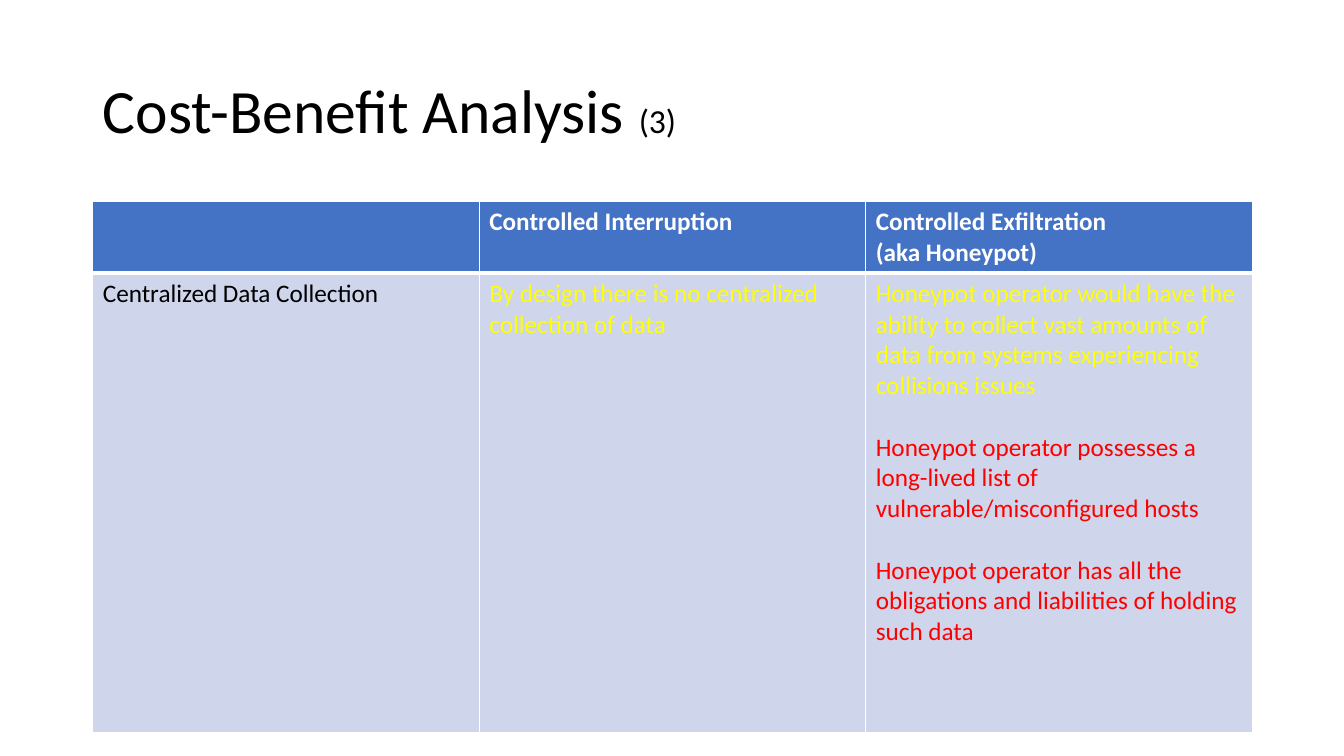
from lxml.etree import SubElement
from pptx import Presentation
from pptx.dml.color import RGBColor
from pptx.enum.text import MSO_ANCHOR, MSO_AUTO_SIZE, PP_ALIGN
from pptx.oxml.ns import qn
from pptx.util import Inches, Pt

HEADER_FILL, BODY_FILL = "4472C4", "CFD5EA"
WHITE, BLACK, YELLOW, RED = "FFFFFF", "000000", "FFFF00", "FF0000"


def add_text(paragraph, text, size=18, color=BLACK, bold=False):
    for index, line in enumerate(text.split("\n")):
        if index:
            paragraph.add_line_break()
        run = paragraph.add_run()
        run.text = line
        run.font.name = "Calibri"
        run.font.size = Pt(size)
        run.font.bold = bold
        run.font.color.rgb = RGBColor.from_string(color)


def set_cell(cell, fill, bottom_width):
    # Borders come before the fill in the cell properties
    properties = cell._tc.get_or_add_tcPr()
    for side, width in (("L", 1), ("R", 1), ("T", 1), ("B", bottom_width)):
        border = SubElement(properties, qn(f"a:ln{side}"), w=str(Pt(width)))
        solid = SubElement(border, qn("a:solidFill"))
        SubElement(solid, qn("a:srgbClr"), val=WHITE)
    cell.fill.solid()
    cell.fill.fore_color.rgb = RGBColor.from_string(fill)


presentation = Presentation()
presentation.slide_width = Inches(13.33)
presentation.slide_height = Inches(7.5)
slide = presentation.slides.add_slide(presentation.slide_layouts[5])
left, width = Inches(0.92), Inches(11.5)

# Title
title = slide.shapes.title
title.left, title.top = left, Inches(0.4)
title.width, title.height = width, Inches(1.45)
frame = title.text_frame
frame.word_wrap = True
frame.auto_size = MSO_AUTO_SIZE.NONE
frame.vertical_anchor = MSO_ANCHOR.MIDDLE
heading = frame.paragraphs[0]
heading.alignment = PP_ALIGN.LEFT
heading.line_spacing = 0.9
add_text(heading, "Cost-Benefit Analysis ", size=44)
add_text(heading, "(3)", size=24)

# Comparison table: each cell is a list of (paragraph, colour)
rows = [
    [
        [],
        [("Controlled Interruption", WHITE)],
        [("Controlled Exfiltration \n(aka Honeypot)", WHITE)],
    ],
    [
        [("Centralized Data Collection", BLACK)],
        [("By design there is no centralized collection of data", YELLOW)],
        [
            ("Honeypot operator would have the ability to collect vast amounts "
             "of data from systems experiencing collisions issues", YELLOW),
            ("Honeypot operator possesses a long-lived list of "
             "vulnerable/misconfigured hosts", RED),
            ("Honeypot operator has all the obligations and liabilities of "
             "holding such data", RED),
        ],
    ],
]
row_heights = [Inches(0.7), Inches(4.56)]
table = slide.shapes.add_table(
    len(rows), len(rows[0]), left, Inches(2), width, sum(row_heights)).table

for row_index, row in enumerate(rows):
    is_header = row_index == 0
    table.rows[row_index].height = row_heights[row_index]
    for column_index, entries in enumerate(row):
        cell = table.cell(row_index, column_index)
        set_cell(cell, HEADER_FILL if is_header else BODY_FILL, 3 if is_header else 1)
        for index, (text, color) in enumerate(entries):
            paragraph = cell.text_frame.paragraphs[0]
            if index:
                paragraph = cell.text_frame.add_paragraph()
                paragraph.space_before = Pt(22)
            add_text(paragraph, text, color=color, bold=is_header)

presentation.save("out.pptx")
